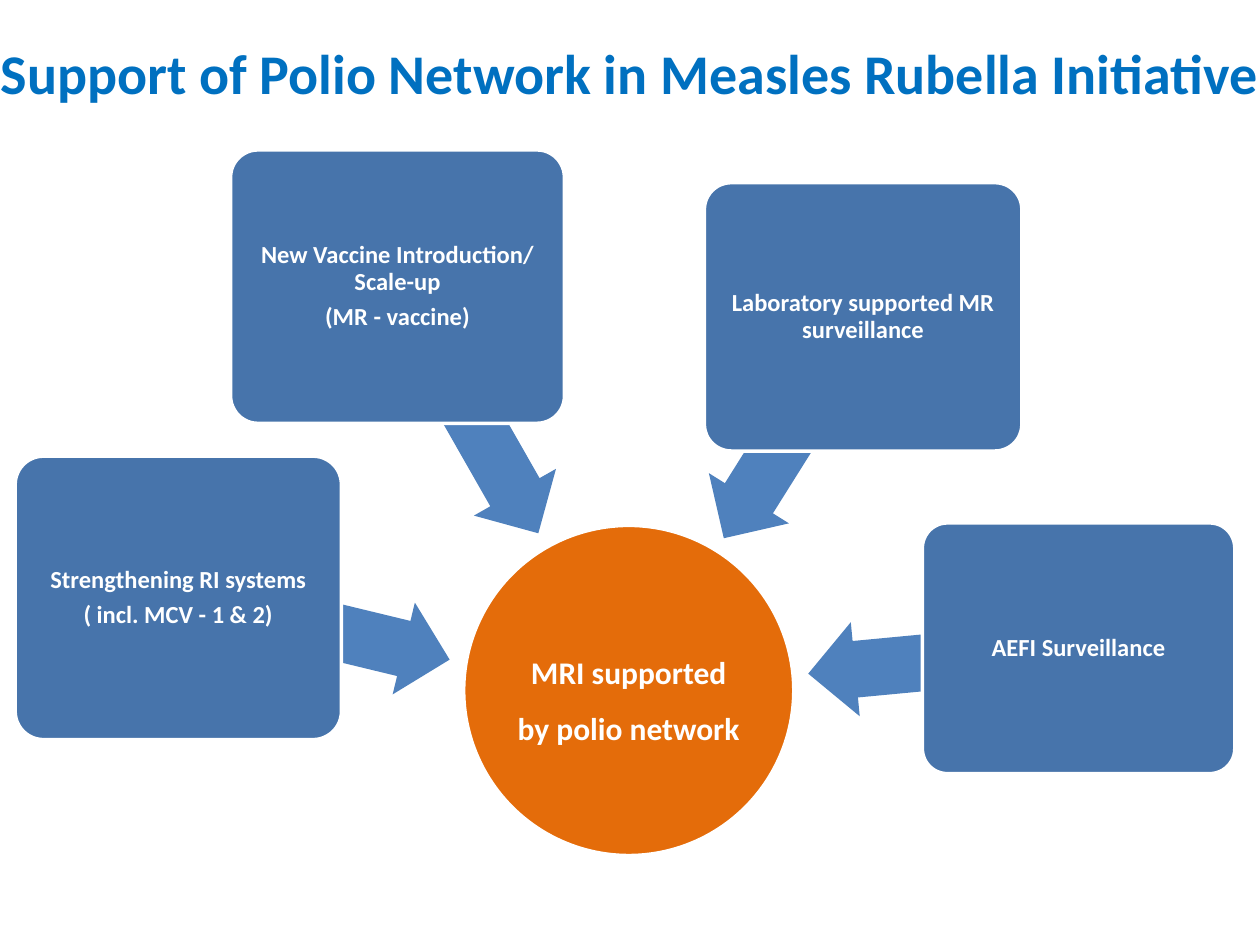
import pptx
import pptx.util
import pptx.dml.color
import pptx.enum.shapes
import pptx.enum.text

Inches = pptx.util.Inches
Pt = pptx.util.Pt
KIND = pptx.enum.shapes.MSO_SHAPE
COLORS = {
    "title": "0070C0",
    "hub": "E46C0A",
    "box": "4774AB",
    "arrow": "4F81BD",
    "white": "FFFFFF",
}


def color(name):
    return pptx.dml.color.RGBColor.from_string(COLORS[name])


def write(frame, text, size=14, ink="white", font="Calibri", inset=0.03,
          spacing=0.9, after=0.35):
    """Fill a frame with centred bold text, one paragraph per line."""
    frame.word_wrap = True
    frame.vertical_anchor = pptx.enum.text.MSO_ANCHOR.MIDDLE
    frame.margin_left = frame.margin_right = Inches(inset)
    frame.margin_top = frame.margin_bottom = Inches(inset)
    for i, line in enumerate(text.split("\n")):
        para = frame.paragraphs[0] if i == 0 else frame.add_paragraph()
        para.alignment = pptx.enum.text.PP_ALIGN.CENTER
        para.line_spacing = spacing
        para.space_after = Pt(size * after)
        run = para.add_run()
        run.text = line
        run.font.name = font
        run.font.size = Pt(size)
        run.font.bold = True
        run.font.color.rgb = color(ink)


class Board:
    """The current slide and the look of its parts."""

    def __init__(self, slide):
        self.slide = slide
        self.edge = Pt(2)

    def shape(self, kind, place, fill, edged=True):
        item = self.slide.shapes.add_shape(kind, *map(Inches, place))
        item.shadow.inherit = False
        item.fill.solid()
        item.fill.fore_color.rgb = color(fill)
        if edged:
            item.line.color.rgb = color("white")
            item.line.width = self.edge
        else:
            item.line.fill.background()
        return item

    def title(self, text, place):
        item = self.slide.shapes.add_textbox(*map(Inches, place))
        item.fill.solid()
        item.fill.fore_color.rgb = color("white")
        write(item.text_frame, text, size=32, ink="title", inset=0,
              spacing=1.0, after=0)

    def hub(self, text, place):
        item = self.shape(KIND.OVAL, place, "hub")
        write(item.text_frame, text, size=18, inset=0.01, spacing=1.5)

    def arrow(self, place, angle):
        item = self.shape(KIND.LEFT_ARROW, place, "arrow", edged=False)
        item.adjustments[0] = 0.6
        item.adjustments[1] = 0.5
        item.rotation = angle

    def box(self, text, place):
        item = self.shape(KIND.ROUNDED_RECTANGLE, place, "box")
        item.adjustments[0] = 0.1
        write(item.text_frame, text)


# Each topic: text, box place, arrow left, top and width, arrow angle
TOPICS = [
    ("Strengthening RI systems\n( incl. MCV - 1 & 2)",
     (0.12, 3.62, 2.59, 2.25), (1.39, 4.6, 2.21), 193.6),
    ("New Vaccine Introduction/ Scale-up\n(MR - vaccine)",
     (1.83, 1.19, 2.65, 2.17), (2.59, 2.88, 2.25), 240.3),
    ("Laboratory supported MR surveillance",
     (5.59, 1.45, 2.52, 2.13), (5.26, 3.02, 2.07), 302.1),
    ("AEFI Surveillance",
     (7.32, 4.15, 2.48, 1.99), (6.41, 4.87, 2.16), 354.6),
]
ARROW_HEIGHT = 0.75


def main():
    deck = pptx.Presentation()
    deck.slide_width = Inches(10)
    deck.slide_height = Inches(7.5)
    board = Board(deck.slides.add_slide(deck.slide_layouts[6]))

    # Title and centre circle
    board.title("Support of Polio Network in Measles Rubella Initiative",
                (0, 0.08, 10, 0.99))
    board.hub("MRI supported by polio network", (3.68, 4.17, 2.62, 2.62))

    # Topics, each box covering the tail of its arrow
    for text, place, arrow, angle in TOPICS:
        board.arrow((*arrow, ARROW_HEIGHT), angle)
        board.box(text, place)

    deck.save("out.pptx")


if __name__ == "__main__":
    main()
